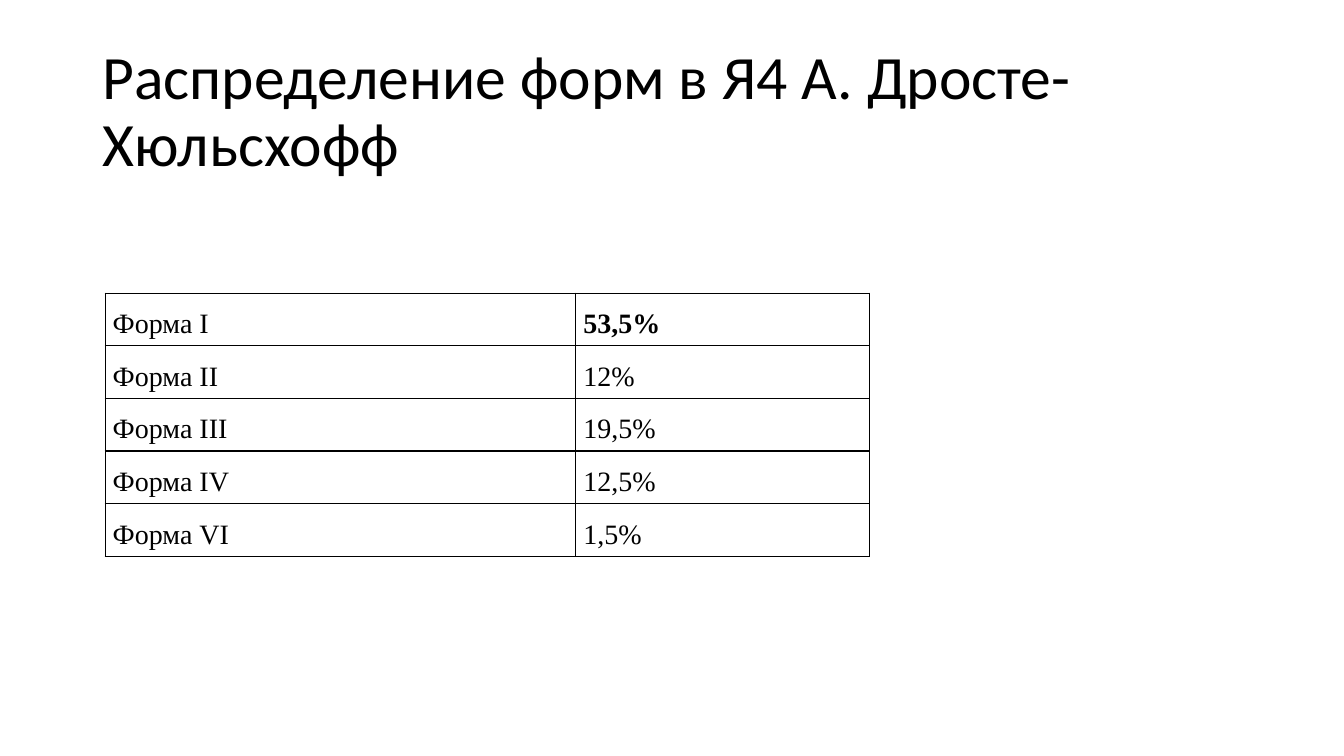
from dataclasses import dataclass

from lxml.etree import SubElement
from pptx import Presentation
from pptx.dml.color import RGBColor
from pptx.enum.text import MSO_ANCHOR, PP_ALIGN
from pptx.oxml.ns import qn
from pptx.util import Cm, Pt


@dataclass(frozen=True)
class Theme:
    ink: str = "000000"
    paper: str = "FFFFFF"
    head_font: str = "Calibri"
    head_size: int = 44
    cell_font: str = "Times New Roman"
    cell_size: int = 20
    rule: int = 1


THEME = Theme()
TITLE = "Распределение форм в Я4 А. Дросте-Хюльсхофф"
FORMS = [
    ("Форма I", "53,5%"),
    ("Форма II", "12%"),
    ("Форма III", "19,5%"),
    ("Форма IV", "12,5%"),
    ("Форма VI", "1,5%"),
]
TOP_SHARE = "53,5%"
WIDTHS = (Cm(11.86), Cm(7.4))
ROW = Cm(1.325)


def add_run(para, text, font, size, bold=False):
    run = para.add_run()
    run.text = text
    run.font.name = font
    run.font.size = Pt(size)
    run.font.bold = bold
    run.font.color.rgb = RGBColor.from_string(THEME.ink)


def add_title(slide, text):
    title = slide.shapes.title
    title.left, title.top = Cm(2.33), Cm(1.01)
    title.width, title.height = Cm(29.21), Cm(3.68)
    frame = title.text_frame
    frame.word_wrap = True
    frame.vertical_anchor = MSO_ANCHOR.MIDDLE
    para = frame.paragraphs[0]
    para.alignment = PP_ALIGN.LEFT
    para.line_spacing = 0.9
    add_run(para, text, THEME.head_font, THEME.head_size)


def add_rules(cell):
    props = cell._tc.get_or_add_tcPr()
    for index, side in enumerate(("a:lnL", "a:lnR", "a:lnT", "a:lnB")):
        line = props.makeelement(qn(side), {"w": str(Pt(THEME.rule))})
        fill = SubElement(line, qn("a:solidFill"))
        SubElement(fill, qn("a:srgbClr"), val=THEME.ink)
        props.insert(index, line)


def fill_cell(cell, text):
    cell.fill.solid()
    cell.fill.fore_color.rgb = RGBColor.from_string(THEME.paper)
    cell.margin_left = cell.margin_right = Cm(0.19)
    cell.margin_top = cell.margin_bottom = 0
    para = cell.text_frame.paragraphs[0]
    para.alignment = PP_ALIGN.JUSTIFY
    para.line_spacing = 1.5
    add_run(para, text, THEME.cell_font, THEME.cell_size, text == TOP_SHARE)
    add_rules(cell)


def add_grid(slide, rows):
    frame = slide.shapes.add_table(
        len(rows), len(WIDTHS), Cm(2.65), Cm(7.39), sum(WIDTHS), ROW * len(rows)
    )
    table = frame.table
    table.first_row = table.horz_banding = False
    for col, width in zip(table.columns, WIDTHS):
        col.width = width
    for row, texts in zip(table.rows, rows):
        row.height = ROW
        for cell, text in zip(row.cells, texts):
            fill_cell(cell, text)


def main():
    deck = Presentation()
    deck.slide_width, deck.slide_height = Cm(33.87), Cm(19.05)
    slide = deck.slides.add_slide(deck.slide_layouts.get_by_name("Title Only"))
    add_title(slide, TITLE)
    add_grid(slide, FORMS)
    deck.save("out.pptx")


if __name__ == "__main__":
    main()
